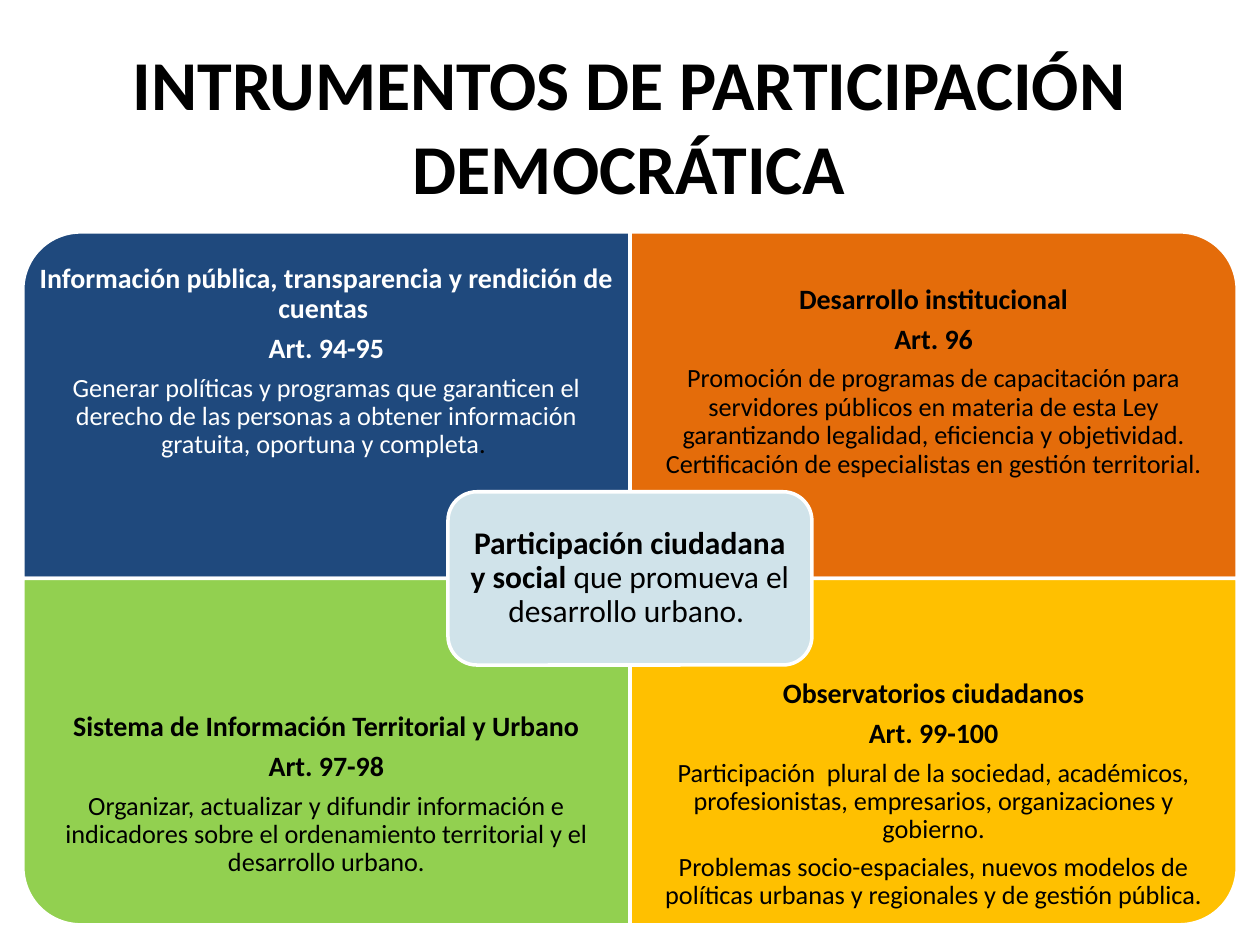
from pptx import Presentation
from pptx.dml.color import RGBColor
from pptx.enum.shapes import MSO_SHAPE
from pptx.enum.text import MSO_ANCHOR, PP_ALIGN
from pptx.util import Pt

QUADRANT = MSO_SHAPE.ROUND_1_RECTANGLE
ROUNDED = MSO_SHAPE.ROUNDED_RECTANGLE
MIDDLE = MSO_ANCHOR.MIDDLE
CENTER = PP_ALIGN.CENTER

BLACK = RGBColor(0x00, 0x00, 0x00)
WHITE = RGBColor(0xFF, 0xFF, 0xFF)
NAVY = RGBColor(0x1F, 0x49, 0x7D)
ORANGE = RGBColor(0xE4, 0x6C, 0x0A)
GREEN = RGBColor(0x92, 0xD0, 0x50)
AMBER = RGBColor(0xFF, 0xC0, 0x00)
PALE_BLUE = RGBColor(0xD0, 0xE3, 0xEA)

# Quadrant grid, in points
LEFT, TOP = 13, 132.5
CELL_WIDTH, CELL_HEIGHT = 347, 198
TEXT_HEIGHT = 148.5
HEADING_SIZE, BODY_SIZE, CENTER_SIZE = 16, 15, 18


def span(text, size=BODY_SIZE, bold=False, color=BLACK):
    """Describe one piece of text and its format."""
    return {"text": text, "size": size, "bold": bold, "color": color}


class Slide:
    """Holds the style and the current slide."""

    font = "Calibri"
    line_color = WHITE
    line_width = Pt(2)
    line_spacing = 0.9
    space_ratio = 0.35

    def __init__(self, page):
        self.page = page

    def fill_text(self, frame, paragraphs, spaced=True):
        frame.word_wrap = True
        frame.vertical_anchor = MIDDLE
        for index, pieces in enumerate(paragraphs):
            para = frame.add_paragraph() if index else frame.paragraphs[0]
            para.alignment = CENTER
            if spaced:
                para.line_spacing = self.line_spacing
                para.space_after = Pt(self.space_ratio * pieces[0]["size"])
            for piece in pieces:
                run = para.add_run()
                run.text = piece["text"]
                run.font.name = self.font
                run.font.size = Pt(piece["size"])
                run.font.bold = piece["bold"]
                run.font.color.rgb = piece["color"]

    def title(self, text, left, top, width, height):
        box = self.page.shapes.title
        box.left, box.top, box.width, box.height = map(Pt, (left, top, width, height))
        self.fill_text(box.text_frame, [[span(text, size=40, bold=True)]], spaced=False)

    def panel(self, kind, left, top, width, height, fill, turn=0):
        """Draw a panel over the given area, whatever its rotation."""
        if turn % 180:
            left, top = left + (width - height) / 2, top + (height - width) / 2
            width, height = height, width
        shape = self.page.shapes.add_shape(kind, *map(Pt, (left, top, width, height)))
        shape.rotation = turn
        shape.shadow.inherit = False
        shape.fill.solid()
        shape.fill.fore_color.rgb = fill
        shape.line.color.rgb = self.line_color
        shape.line.width = self.line_width
        return shape

    def text_box(self, left, top, width, height, paragraphs):
        box = self.page.shapes.add_textbox(*map(Pt, (left, top, width, height)))
        frame = box.text_frame
        frame.margin_left = frame.margin_right = Pt(8.5)
        frame.margin_top = frame.margin_bottom = 0
        self.fill_text(frame, paragraphs)


# Column, row, rotation, fill, text colour, text shift, headings, body paragraphs
QUADRANTS = [
    (0, 0, 270, NAVY, WHITE, 0,
     ["Información pública, transparencia y rendición de cuentas ", "Art. 94-95"],
     [[span("Generar políticas y programas que garanticen el derecho de las personas "
            "a obtener información gratuita, oportuna y completa", color=WHITE),
       span(". ")]]),
    (1, 0, 0, ORANGE, BLACK, 11.5,
     ["Desarrollo institucional", "Art. 96"],
     [[span("Promoción de programas de capacitación para servidores públicos en materia "
            "de esta Ley garantizando legalidad, eficiencia y objetividad. "
            "Certificación de especialistas en gestión territorial.")]]),
    (0, 1, 180, GREEN, BLACK, 0,
     ["Sistema de Información Territorial y Urbano", "Art. 97-98"],
     [[span("Organizar, actualizar y difundir información e indicadores sobre el "
            "ordenamiento territorial y el desarrollo urbano.")]]),
    (1, 1, 90, AMBER, BLACK, 0,
     ["Observatorios ciudadanos", "Art. 99-100"],
     [[span("Participación  plural de la sociedad, académicos, profesionistas, "
            "empresarios, organizaciones y gobierno.")],
      [span("Problemas socio-espaciales, nuevos modelos de políticas urbanas y "
            "regionales y de gestión pública.")]]),
]


def main():
    deck = Presentation()
    deck.slide_width, deck.slide_height = Pt(720), Pt(540)
    slide = Slide(deck.slides.add_slide(deck.slide_layouts[5]))

    slide.title("INTRUMENTOS DE PARTICIPACIÓN DEMOCRÁTICA", 35.5, 10, 648, 122.5)

    # Four quadrants, with text kept to the outer part of each
    for column, row, turn, fill, color, shift, headings, body in QUADRANTS:
        left = LEFT + column * CELL_WIDTH
        top = TOP + row * CELL_HEIGHT
        slide.panel(QUADRANT, left, top, CELL_WIDTH, CELL_HEIGHT, fill, turn)
        text_top = top + row * (CELL_HEIGHT - TEXT_HEIGHT) + shift
        heads = [[span(text, size=HEADING_SIZE, bold=True, color=color)]
                 for text in headings]
        slide.text_box(left, text_top, CELL_WIDTH, TEXT_HEIGHT, heads + body)

    # Central panel
    width, height = 208, 99
    hub = slide.panel(ROUNDED, LEFT + CELL_WIDTH - width / 2,
                      TOP + CELL_HEIGHT - height / 2, width, height, PALE_BLUE)
    frame = hub.text_frame
    frame.margin_left = frame.margin_right = Pt(5)
    frame.margin_top = frame.margin_bottom = Pt(5)
    slide.fill_text(frame, [[
        span("Participación ciudadana y social ", size=CENTER_SIZE, bold=True),
        span("que promueva el desarrollo urbano. ", size=CENTER_SIZE),
    ]])

    deck.save("out.pptx")


if __name__ == "__main__":
    main()
